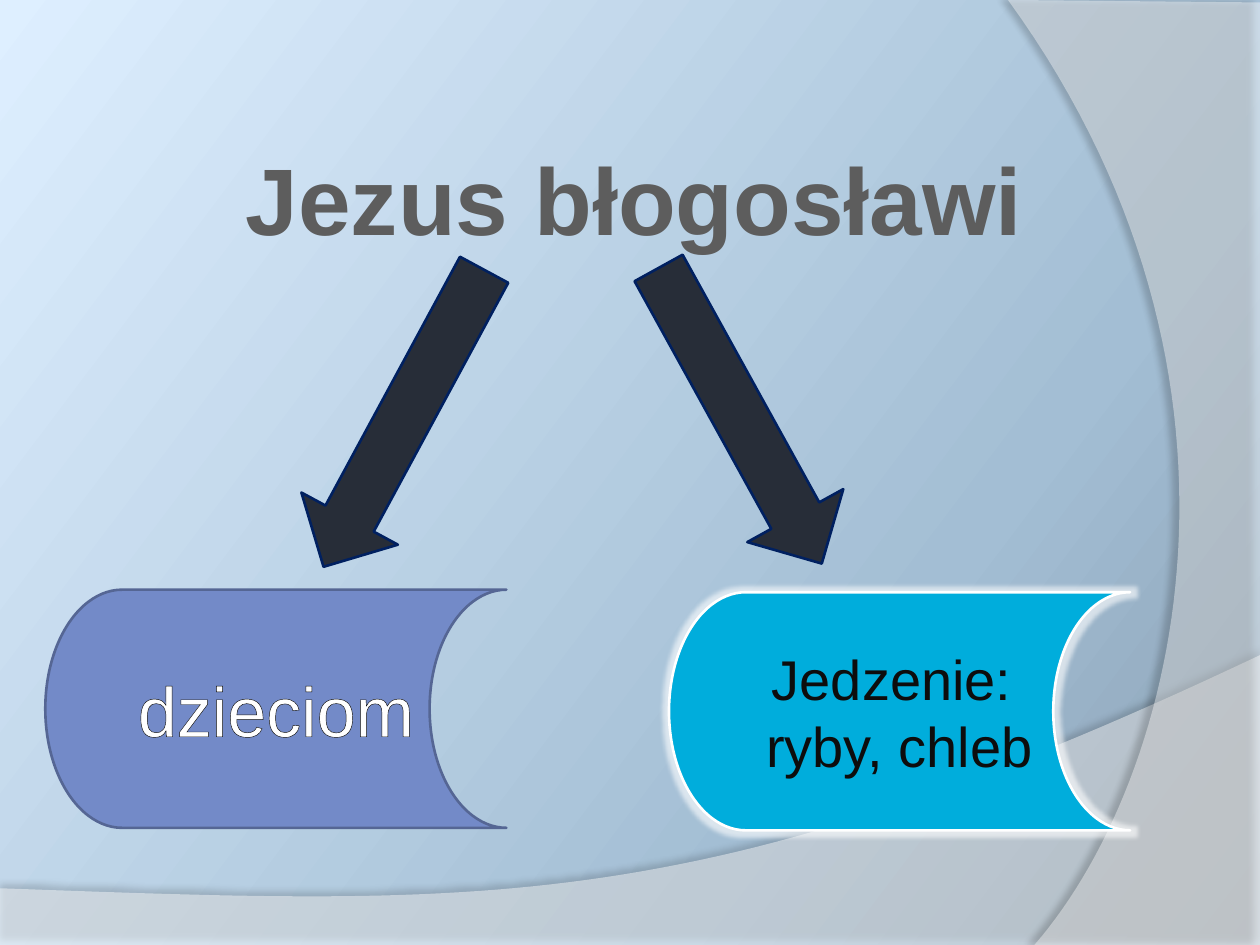
import pptx
import pptx.dml.color
import pptx.enum.shapes
import pptx.enum.text
import pptx.oxml
import pptx.oxml.ns
import pptx.util

SHAPE = pptx.enum.shapes.MSO_SHAPE
CENTER = pptx.enum.text.PP_ALIGN.CENTER
ANCHOR = pptx.enum.text.MSO_ANCHOR
AUTO = pptx.enum.text.MSO_AUTO_SIZE
NS = pptx.oxml.ns.nsdecls("a")
WIDTH, HEIGHT = 10, 7.5


class Theme:
    font = "Arial"
    title_size, big_size, body_size = 54, 40, 32
    title, white, ink = "5D5D5D", "FFFFFF", "0D0D0D"
    arrow, arrow_line = "272D38", "002060"
    violet, violet_line, cyan = "738AC8", "556694", "00ADDC"
    background = ((0, "899FB2"), (30, "A3BED4"), (100, "DEEFFF"))
    background_angle = 217
    line_width = 1.5


def rgb(value):
    return pptx.dml.color.RGBColor.from_string(value)


def emu(*inches):
    return [pptx.util.Inches(v) for v in inches]


def color_xml(color, alpha=100):
    return f'<a:srgbClr val="{color}"><a:alpha val="{alpha * 1000}"/></a:srgbClr>'


def add_effect(sp, tag, attributes, color, alpha):
    """Put one effect into the shape's own effect list."""
    sp.shadow.inherit = False
    effects = sp._element.spPr.find(pptx.oxml.ns.qn("a:effectLst"))
    effects.append(pptx.oxml.parse_xml(
        f"<a:{tag} {NS} {attributes}>{color_xml(color, alpha)}</a:{tag}>"))


def paint_background(s):
    fill = s.background.fill
    fill.gradient()
    fill.gradient_angle = 360 - Theme.background_angle
    stops = fill._fill._gradFill.find(pptx.oxml.ns.qn("a:gsLst"))
    for stop in list(stops):
        stops.remove(stop)
    for position, color in Theme.background:
        stops.append(pptx.oxml.parse_xml(
            f'<a:gs {NS} pos="{position * 1000}">{color_xml(color)}</a:gs>'))


def curve(p0, p1, p2, p3, steps=60):
    """Points along a cubic curve, both ends included."""
    for i in range(steps + 1):
        t = i / steps
        u = 1 - t
        yield tuple(u**3 * a + 3 * u * u * t * b + 3 * u * t * t * c + t**3 * d
                    for a, b, c, d in zip(p0, p1, p2, p3))


def add_wave(s, points, alpha, shadow_alpha, distance, direction):
    """Translucent white wave with a soft shadow along its edge."""
    points = [emu(*point) for point in points]
    builder = s.shapes.build_freeform(*points[0], scale=1.0)
    builder.add_line_segments(points[1:], close=True)
    sp = builder.convert_to_shape()
    sp.fill.solid()
    sp.fill.fore_color.rgb = rgb(Theme.white)
    sp.fill._xPr.solidFill.find(pptx.oxml.ns.qn("a:srgbClr")).append(
        pptx.oxml.parse_xml(f'<a:alpha {NS} val="{alpha * 1000}"/>'))
    sp.line.fill.background()
    add_effect(sp, "outerShdw",
               f'blurRad="{pptx.util.Pt(4)}" dist="{pptx.util.Pt(distance)}" '
               f'dir="{direction * 60000}" algn="ctr" rotWithShape="0"',
               "000000", shadow_alpha)


def write(tf, lines, size, color, bold=False, outline=None):
    for i, line in enumerate(lines):
        p = tf.paragraphs[0] if i == 0 else tf.add_paragraph()
        p.alignment = CENTER
        r = p.add_run()
        r.text = line
        formats = {"name": Theme.font, "size": pptx.util.Pt(size), "bold": bold}
        for name, value in formats.items():
            setattr(r.font, name, value)
        r.font.color.rgb = rgb(color)
        if outline:
            line_color, width = outline
            r.font._element.insert(0, pptx.oxml.parse_xml(
                f'<a:ln {NS} w="{pptx.util.Pt(width)}"><a:solidFill>'
                f"{color_xml(line_color)}</a:solidFill></a:ln>"))


def add_title(s, text):
    sp = s.shapes.title
    box = dict(zip(("left", "top", "width", "height"), emu(1.82, 1.07, 6.43, 1.01)))
    for name, value in box.items():
        setattr(sp, name, value)
    formats = {"word_wrap": False, "vertical_anchor": ANCHOR.TOP,
               "auto_size": AUTO.SHAPE_TO_FIT_TEXT}
    for name, value in formats.items():
        setattr(sp.text_frame, name, value)
    write(sp.text_frame, [text], Theme.title_size, Theme.title, True,
          (Theme.white, 1.4))


def add_block(s, kind, box, fill, line):
    sp = s.shapes.add_shape(kind, *emu(*box))
    sp.shadow.inherit = False
    sp.fill.solid()
    sp.fill.fore_color.rgb = rgb(fill)
    sp.line.color.rgb = rgb(line)
    sp.line.width = pptx.util.Pt(Theme.line_width)
    return sp


def add_label(s, left, top, fill, line, *text):
    sp = add_block(s, SHAPE.FLOWCHART_STORED_DATA, (left, top, 3.66, 1.89), fill, line)
    sp.text_frame.word_wrap = True
    sp.text_frame.vertical_anchor = ANCHOR.MIDDLE
    write(sp.text_frame, *text)
    return sp


def main():
    prs = pptx.Presentation()
    prs.slide_width, prs.slide_height = emu(WIDTH, HEIGHT)
    s = prs.slides.add_slide(prs.slide_layouts[5])

    # Background and its two waves
    paint_background(s)
    bottom = [(0, HEIGHT), (WIDTH, HEIGHT),
              *curve((WIDTH, 5.2), (5.59, 7.29), (3.91, 7.19), (0, 7.05))]
    right = [(WIDTH, 0.02), (WIDTH, HEIGHT),
             *curve((8.21, HEIGHT), (9.35, 6.19), (10.18, 3), (8, 0))]
    add_wave(s, bottom, 45, 35, 3.5, 270)
    add_wave(s, right, 40, 45, 4, 180)

    add_title(s, "Jezus błogosławi")

    # Arrows from the title to the two labels
    for left, top, angle in ((2.77, 1.98, 28.4), (5.44, 1.96, 331.1)):
        sp = add_block(s, SHAPE.DOWN_ARROW, (left, top, 0.87, 2.68),
                       Theme.arrow, Theme.arrow_line)
        sp.rotation = angle

    # Labels, the second one with a white glow
    add_label(s, 0.36, 4.68, Theme.violet, Theme.violet_line,
              ["dzieciom"], Theme.big_size, Theme.white, False, (Theme.ink, 0.75))
    sp = add_label(s, 5.31, 4.7, Theme.cyan, Theme.white,
                   ["Jedzenie: ", "ryby, chleb"], Theme.body_size, Theme.ink)
    add_effect(sp, "glow", f'rad="{pptx.util.Pt(5)}"', Theme.white, 60)

    prs.save("out.pptx")


if __name__ == "__main__":
    main()
